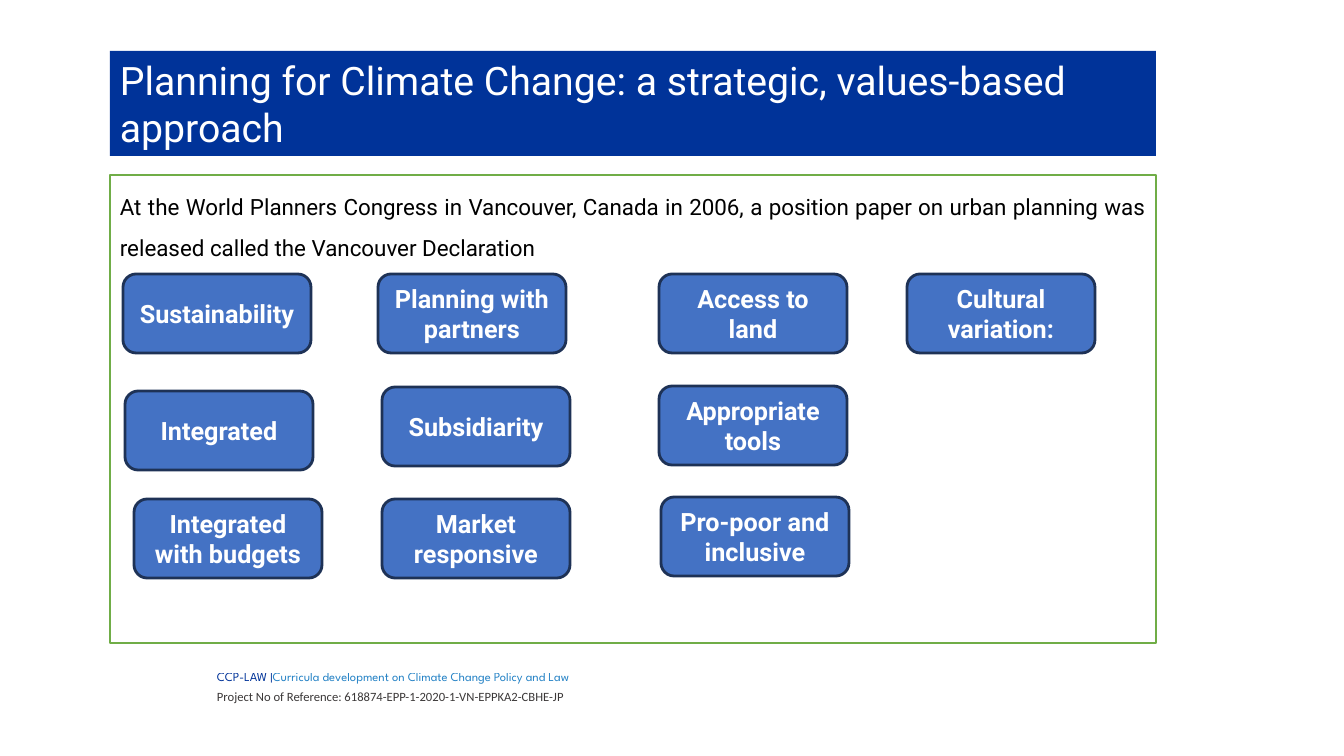
from pptx import Presentation
from pptx.dml.color import RGBColor
from pptx.enum.shapes import MSO_SHAPE as Shape
from pptx.enum.text import MSO_ANCHOR as Anchor, MSO_AUTO_SIZE as AutoSize, PP_ALIGN as Align
from pptx.util import Pt

EMU_PER_PX = 914400 / 100.8

WHITE = RGBColor(0xFF, 0xFF, 0xFF)
BLACK = RGBColor(0x00, 0x00, 0x00)
NAVY = RGBColor(0x00, 0x33, 0x99)
SKY = RGBColor(0x26, 0x83, 0xC6)
CHARCOAL = RGBColor(0x3B, 0x38, 0x38)
GREEN = RGBColor(0x70, 0xAD, 0x47)
BLUE = RGBColor(0x44, 0x72, 0xC4)
DARK_BLUE = RGBColor(0x1E, 0x32, 0x56)

PANEL_LEFT, PANEL_WIDTH = 110, 1046
CARD_SIZE = (188, 79)
PRINCIPLES = [
    ("Sustainability", 123, 274),
    ("Planning with partners", 378, 274),
    ("Access to land", 659, 274),
    ("Cultural variation:", 907, 274),
    ("Integrated", 125, 391),
    ("Subsidiarity", 382, 387),
    ("Appropriate tools", 659, 386),
    ("Integrated with budgets", 134, 499),
    ("Market responsive", 382, 499),
    ("Pro-poor and inclusive", 661, 497),
]
FOOTER = [
    [("CCP-LAW |", NAVY, "League Spartan"),
     ("Curricula development on Climate Change Policy and Law", SKY, "League Spartan")],
    [("Project No of Reference: 618874-EPP-1-2020-1-VN-EPPKA2-CBHE-JP", CHARCOAL, "Calibri")],
]


def px(length):
    return round(length * EMU_PER_PX)


def set_values(target, **values):
    """Set each named attribute of the target."""
    for name, value in values.items():
        setattr(target, name, value)


class SlideBuilder:
    font_name = "Roboto"

    def __init__(self, slide):
        self.slide = slide

    def add_text(self, paragraph, text, size, color, font_name=None, bold=False):
        run = paragraph.add_run()
        run.text = text
        set_values(run.font, name=font_name or self.font_name, size=Pt(size), bold=bold)
        run.font.color.rgb = color

    def box(self, kind, bounds, fill, text, size, color, line=None, bold=False,
            frame_format=None, paragraph_format=None):
        """Add a filled shape with one paragraph; line is (colour, points)."""
        shape = self.slide.shapes.add_shape(kind, *map(px, bounds))
        shape.shadow.inherit = False
        shape.fill.solid()
        shape.fill.fore_color.rgb = fill
        if line:
            shape.line.color.rgb, shape.line.width = line[0], Pt(line[1])
        else:
            shape.line.fill.background()
        frame = shape.text_frame
        set_values(frame, word_wrap=True, **(frame_format or {}))
        paragraph = frame.paragraphs[0]
        set_values(paragraph, **(paragraph_format or {}))
        self.add_text(paragraph, text, size, color, bold=bold)

    def panel(self, top, height, fill, text, size, color, **options):
        bounds = (PANEL_LEFT, top, PANEL_WIDTH, height)
        self.box(Shape.RECTANGLE, bounds, fill, text, size, color, **options)

    def card(self, text, left, top):
        self.box(Shape.ROUNDED_RECTANGLE, (left, top, *CARD_SIZE), BLUE, text, 18, WHITE,
                 line=(DARK_BLUE, 2), bold=True,
                 frame_format={"vertical_anchor": Anchor.MIDDLE},
                 paragraph_format={"alignment": Align.CENTER})

    def footer(self, left, top, column_widths, row_height, lines):
        """Add a one-row table whose last cell holds the lines."""
        size = (sum(column_widths), row_height)
        table = self.slide.shapes.add_table(
            1, len(column_widths), *map(px, (left, top, *size))).table
        set_values(table, first_row=False, horz_banding=False)
        for column, width in zip(table.columns, column_widths):
            column.width = px(width)
        for cell in table.rows[0].cells:
            cell.fill.background()
            set_values(cell, margin_left=px(7), margin_right=px(7), margin_top=0,
                       margin_bottom=0, vertical_anchor=Anchor.MIDDLE)
        frame = table.cell(0, len(column_widths) - 1).text_frame
        for index, runs in enumerate(lines):
            paragraph = frame.add_paragraph() if index else frame.paragraphs[0]
            set_values(paragraph, line_spacing=1.07, space_before=Pt(3 if index else 0))
            for text, color, font_name in runs:
                self.add_text(paragraph, text, 9, color, font_name)


def main():
    presentation = Presentation()
    set_values(presentation, slide_width=px(1344), slide_height=px(756))
    builder = SlideBuilder(presentation.slides.add_slide(presentation.slide_layouts[6]))

    builder.footer(131, 672, (79, 377), 12, FOOTER)
    builder.panel(51, 105, NAVY,
                  "Planning for Climate Change: a strategic, values-based approach", 28, WHITE,
                  frame_format={"vertical_anchor": Anchor.TOP,
                                "auto_size": AutoSize.SHAPE_TO_FIT_TEXT},
                  paragraph_format={"alignment": Align.LEFT})
    builder.panel(175, 468, WHITE,
                  "At the World Planners Congress in Vancouver, Canada in 2006, a position paper "
                  "on urban planning was released called the Vancouver Declaration", 16, BLACK,
                  line=(GREEN, 1),
                  frame_format={"vertical_anchor": Anchor.TOP},
                  paragraph_format={"alignment": Align.JUSTIFY, "line_spacing": 1.5})
    for principle in PRINCIPLES:
        builder.card(*principle)

    presentation.save("out.pptx")


if __name__ == "__main__":
    main()
